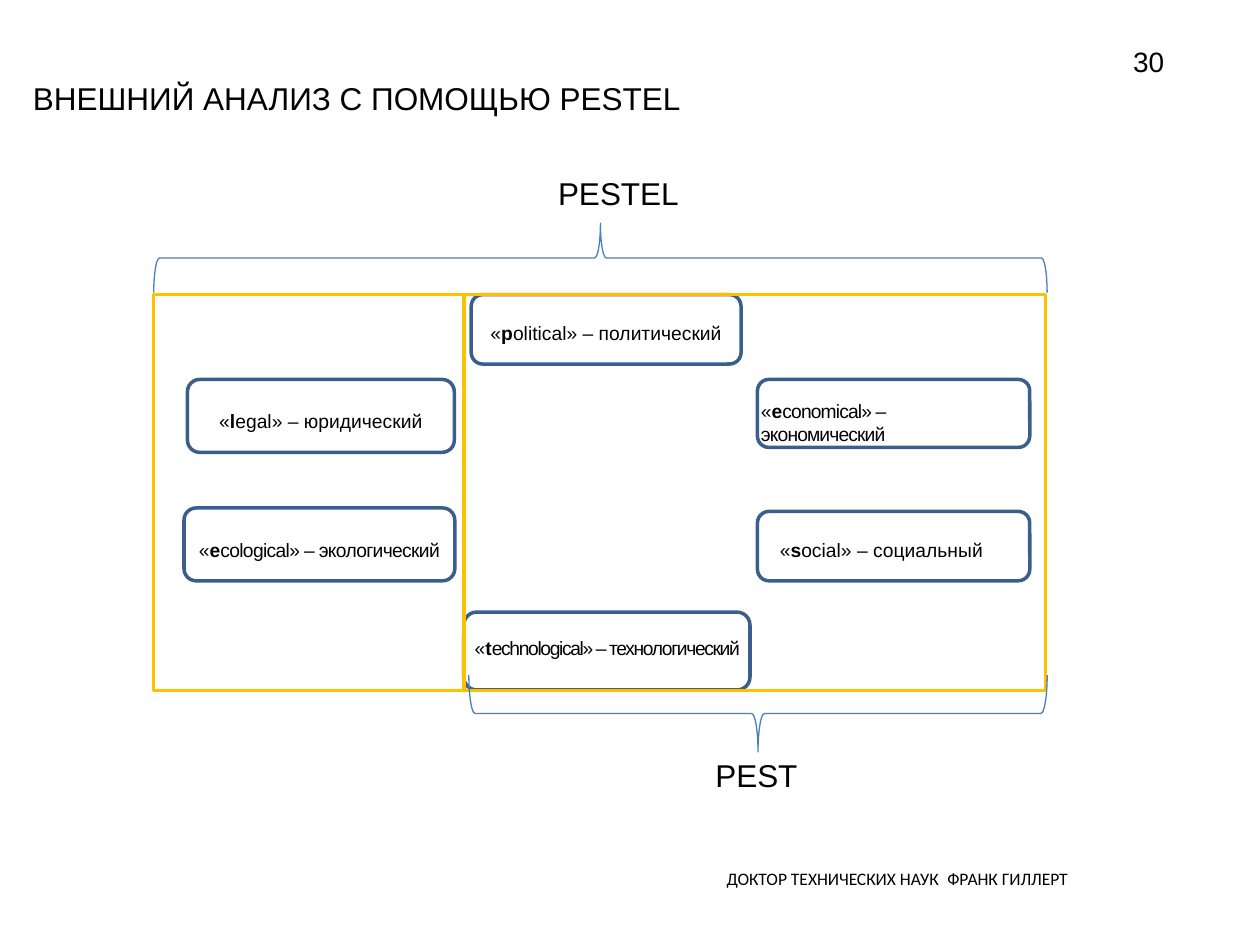
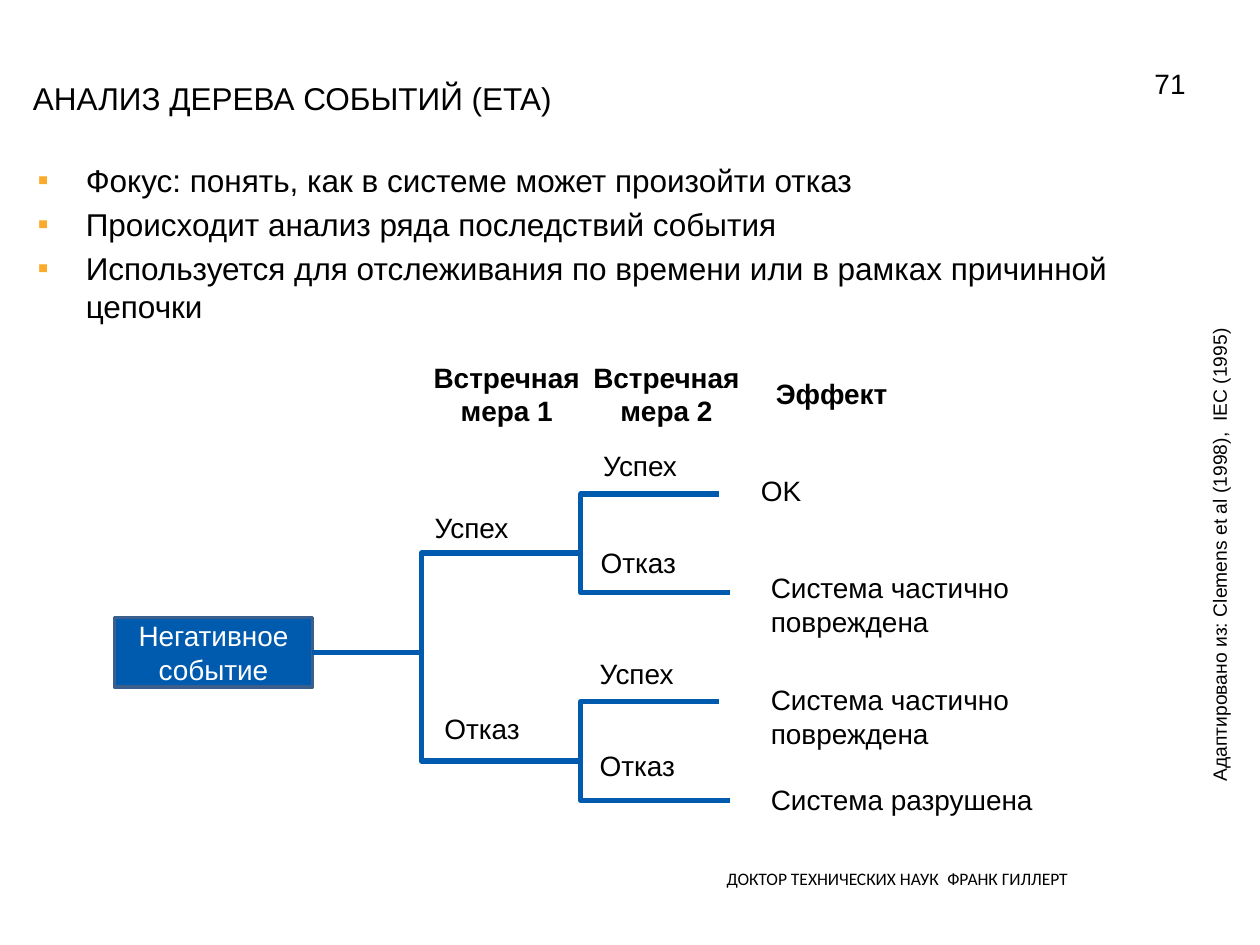
from lxml.etree import SubElement
from pptx import Presentation
from pptx.dml.color import RGBColor
from pptx.enum.shapes import MSO_CONNECTOR, MSO_SHAPE
from pptx.enum.text import MSO_ANCHOR, MSO_AUTO_SIZE, PP_ALIGN
from pptx.oxml.ns import qn
from pptx.util import Cm, Pt

# ---------- Shared look ----------
COLORS = {
    "text": "000000", "white": "FFFFFF", "outline": "3A5F8C",
    "frame": "FFC000", "brace": "4B7EBC", "tree": "005BAE", "bullet": "FBAA29",
}
FONT = "Arial"
TITLE_BOX = (0.41, 1.47, 20.62, 1.85)
FOOTER_BOX = (14.4, 17.09, 10.36, 1.12)
FOOTER = [
    ("ДОКТОР ТЕХНИЧЕСКИХ НАУК", {"name": "Calibri", "size": Pt(10)}),
    (" ", {"size": Pt(18)}),
    ("ФРАНК ГИЛЛЕРТ", {"name": "Calibri", "size": Pt(10)}),
]

# ---------- Slide 1 content (lengths in cm) ----------
PESTEL = {"title": "ВНЕШНИЙ АНАЛИЗ С ПОМОЩЬЮ PESTEL",
          "number": "30", "number_at": (17.78, 0.58)}
# opening, stressed letter, rest, letter spacing (pt), box, label place and width
FACTORS = [
    ("«", "l", "egal» – юридический", 0, (3.78, 7.65, 5.38, 1.47), (4.17, 8.13, 4.62)),
    ("«", "e", "cological» – экологический", -0.4, (3.71, 10.24, 5.46, 1.47), (3.76, 10.72, 5.36)),
    (" «", "p", "olitical» – политический", 0, (9.5, 5.94, 5.44, 1.4), (9.53, 6.35, 5.31)),
    ("«", "e", "conomical» – экономический", -0.5, (15.27, 7.65, 5.49, 1.37), (15.09, 7.92, 5.61)),
    ("«", "t", "echnological» – технологический", -0.8, (9.35, 12.34, 5.77, 1.57), (9.32, 12.7, 6.05)),
    ("«", "s", "ocial» – социальный", 0, (15.27, 10.31, 5.49, 1.4), (15.47, 10.72, 4.62)),
]
FRAME_TOP, FRAME_HEIGHT = 5.94, 7.98
FRAMES = [(3.1, 6.25), (9.35, 11.73)]  # left, width
# left, top, width, height as seen, and rotation
BRACES = [((3.1, 4.5, 18.01, 1.4), 270), ((9.45, 13.61, 11.66, 1.55), 90)]
BRACE_LABELS = [("PESTEL", (11, 3.38, 2.97, 1.02)), ("PEST", (14.17, 15.11, 2.18, 0.94))]

# ---------- Slide 2 content (lengths in cm) ----------
EVENT_TREE = {"title": "АНАЛИЗ ДЕРЕВА СОБЫТИЙ (ETA)",
              "number": "71", "number_at": (18.21, 1.02)}
POINTS = [
    "Фокус: понять, как в системе может произойти отказ",
    "Происходит анализ ряда последствий события",
    "Используется для отслеживания по времени или в рамках причинной цепочки",
]
POINTS_BOX = (0.51, 3.12, 24.13, 3.18)
POINT_INDENT = 0.97
EVENT, EVENT_BOX = "Негативное событие", (2.31, 12.45, 3.99, 1.4)
HEADINGS = [
    ("Встречная мера 1", (8.41, 7.14, 3.61, 1.63), PP_ALIGN.CENTER),
    ("Встречная мера 2", (11.63, 7.14, 3.61, 1.63), PP_ALIGN.CENTER),
    ("Эффект", (15.39, 7.47, 3.61, 0.94), PP_ALIGN.LEFT),
]
MEASURE_1_END = 10.69
MEASURE_1_LEVELS = (11.15, 15.34)
MEASURE_2_FORK = 11.71
MEASURE_2_ARMS = [(14.5, -1.19), (14.71, 0.8)]  # right end, rise or drop
OUTCOMES = [
    ("Успех", 8.51, 10.16), ("Отказ", 8.71, 14.22),
    ("Успех", 11.91, 8.92), ("Отказ", 11.86, 10.87),
    ("Успех", 11.84, 13.11), ("Отказ", 11.84, 14.96),
]
EFFECTS = [
    ("OK", 15.09, 9.42), ("Система частично повреждена", 15.29, 11.38),
    ("Система частично повреждена", 15.29, 13.64), ("Система разрушена", 15.29, 15.65),
]
LABEL_HEIGHT, OUTCOME_WIDTH, EFFECT_WIDTH = 0.94, 3, 7.39
SOURCE = "Адаптировано из: Clemens et al (1998),  IEC (1995)"
SOURCE_BOX = (19.74, 10.85, 9.7, 0.74)


# ---------- Helpers ----------
def cm(box):
    return [Cm(length) for length in box]


def rgb(key):
    return RGBColor.from_string(COLORS[key])


def apply(target, values):
    for attribute, value in values.items():
        setattr(target, attribute, value)


def write(paragraph, runs, size, color="text", align=PP_ALIGN.LEFT, bold=False, spacing=0):
    """Fill a paragraph from a string or from (text, font overrides) pairs."""
    paragraph.alignment = align
    for text, overrides in [(runs, {})] if isinstance(runs, str) else runs:
        run = paragraph.add_run()
        run.text = text
        apply(run.font, {"name": FONT, "size": Pt(size), "bold": bold, **overrides})
        run.font.color.rgb = rgb(color)
        if spacing:
            run.font._element.set("spc", str(round(spacing * 100)))


def add_label(shapes, box, runs, size, wrap=True, anchor=MSO_ANCHOR.TOP,
              grow=True, **text_format):
    label = shapes.add_textbox(*cm(box))
    apply(label.text_frame, {
        "word_wrap": wrap, "vertical_anchor": anchor,
        "auto_size": MSO_AUTO_SIZE.SHAPE_TO_FIT_TEXT if grow else MSO_AUTO_SIZE.NONE,
    })
    write(label.text_frame.paragraphs[0], runs, size, **text_format)
    return label


def add_outline(shapes, kind, box, line, width=2, fill=None):
    outline = shapes.add_shape(kind, *cm(box))
    outline.shadow.inherit = False
    if fill:
        outline.fill.solid()
        outline.fill.fore_color.rgb = rgb(fill)
    else:
        outline.fill.background()
    outline.line.color.rgb = rgb(line)
    outline.line.width = Pt(width)
    return outline


def add_brace(shapes, box, rotation):
    left, top, width, height = box
    shift = (width - height) / 2  # the frame is turned about its centre
    turned = (left + shift, top - shift, height, width)
    add_outline(shapes, MSO_SHAPE.RIGHT_BRACE, turned, "brace", 0.75).rotation = rotation


def add_branch(shapes, start, end):
    branch = shapes.add_connector(MSO_CONNECTOR.ELBOW, *cm(start + end))
    branch.line.color.rgb = rgb("tree")
    branch.line.width = Pt(3)
    SubElement(branch._element.spPr, qn("a:effectLst"))
    return branch


def add_bullet(paragraph):
    properties = paragraph._p.get_or_add_pPr()
    apply(paragraph, {"space_before": Pt(3.6)})
    properties.set("marL", str(Cm(POINT_INDENT)))
    properties.set("indent", str(-Cm(POINT_INDENT)))
    color = SubElement(properties, qn("a:buClr"))
    SubElement(color, qn("a:srgbClr"), val=COLORS["bullet"])
    SubElement(properties, qn("a:buFont"), typeface=FONT)
    SubElement(properties, qn("a:buChar"), char="▪")


def start_slide(deck, content):
    """Add a slide with its title, footer and number."""
    slide = deck.slides.add_slide(deck.slide_layouts[5])
    title = slide.shapes.title
    apply(title, dict(zip(("left", "top", "width", "height"), cm(TITLE_BOX))))
    apply(title.text_frame, {"vertical_anchor": MSO_ANCHOR.TOP, "word_wrap": True,
                             "auto_size": MSO_AUTO_SIZE.NONE})
    write(title.text_frame.paragraphs[0], content["title"], 18)
    add_label(slide.shapes, FOOTER_BOX, FOOTER, 10)
    add_label(slide.shapes, content["number_at"] + (5.94, 1.32), content["number"], 16,
              anchor=MSO_ANCHOR.MIDDLE, grow=False, align=PP_ALIGN.RIGHT)
    return slide.shapes


# ---------- Slides ----------
def build_pestel(deck):
    shapes = start_slide(deck, PESTEL)
    # Six factors
    for opening, letter, rest, spacing, box, (left, top, width) in FACTORS:
        factor = shapes.add_group_shape().shapes
        add_outline(factor, MSO_SHAPE.ROUNDED_RECTANGLE, box, "outline", fill="white")
        runs = [(opening, {}), (letter, {"bold": True}), (rest, {})]
        add_label(factor, (left, top, width, 0.74), runs, 11, wrap=False, spacing=spacing)
    # Frames and braces for the two sets of factors
    for left, width in FRAMES:
        add_outline(shapes, MSO_SHAPE.RECTANGLE,
                    (left, FRAME_TOP, width, FRAME_HEIGHT), "frame")
    for box, rotation in BRACES:
        add_brace(shapes, box, rotation)
    for name, box in BRACE_LABELS:
        add_label(shapes, box, name, 18, wrap=False)


def build_event_tree(deck):
    shapes = start_slide(deck, EVENT_TREE)
    # Key points
    points = add_label(shapes, POINTS_BOX, POINTS[0], 18, grow=False).text_frame
    for point in POINTS[1:]:
        write(points.add_paragraph(), point, 18)
    for paragraph in points.paragraphs:
        add_bullet(paragraph)
    # Event
    event = add_outline(shapes, MSO_SHAPE.RECTANGLE, EVENT_BOX, "outline", fill="tree")
    event.text_frame.word_wrap = True
    event.text_frame.vertical_anchor = MSO_ANCHOR.MIDDLE
    write(event.text_frame.paragraphs[0], EVENT, 16, "white", PP_ALIGN.CENTER)
    # Branches: the bend of each one lies halfway along it
    left, top, width, height = EVENT_BOX
    for level in MEASURE_1_LEVELS:
        branch = add_branch(shapes, (left + width, top + height / 2), (MEASURE_1_END, level))
        branch.begin_connect(event, 3)
        for end, step in MEASURE_2_ARMS:
            add_branch(shapes, (2 * MEASURE_2_FORK - end, level), (end, level + step))
    # Headings, outcomes and effects
    for heading, box, align in HEADINGS:
        add_label(shapes, box, heading, 16, align=align, bold=True)
    for labels, width in ((OUTCOMES, OUTCOME_WIDTH), (EFFECTS, EFFECT_WIDTH)):
        for text, left, top in labels:
            add_label(shapes, (left, top, width, LABEL_HEIGHT), text, 16)
    # Source note along the right edge
    add_label(shapes, SOURCE_BOX, SOURCE, 11, wrap=False, align=PP_ALIGN.RIGHT).rotation = 270


def main():
    deck = Presentation()
    deck.slide_width, deck.slide_height = Cm(25.4), Cm(19.05)
    build_pestel(deck)
    build_event_tree(deck)
    deck.save("out.pptx")


if __name__ == "__main__":
    main()
